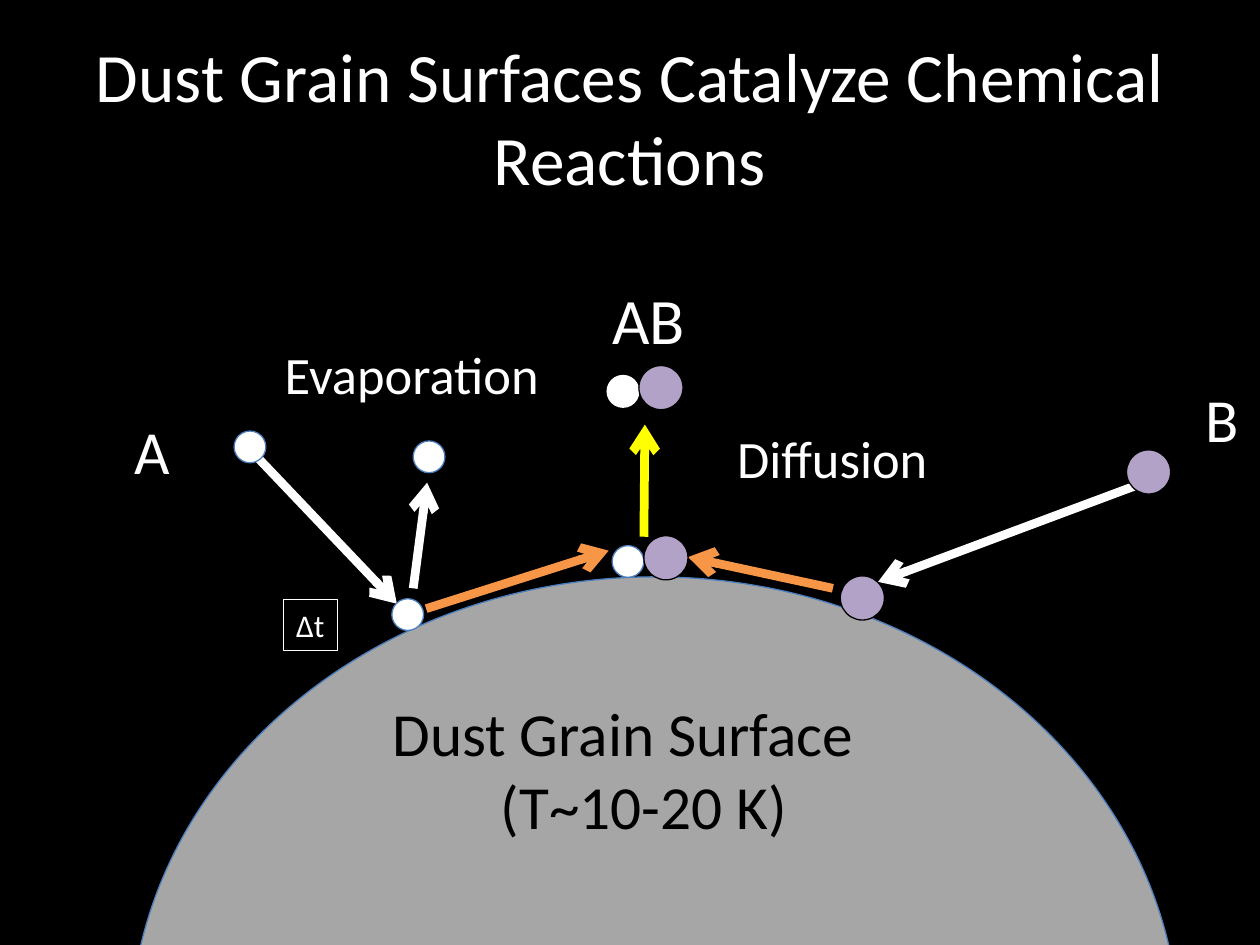
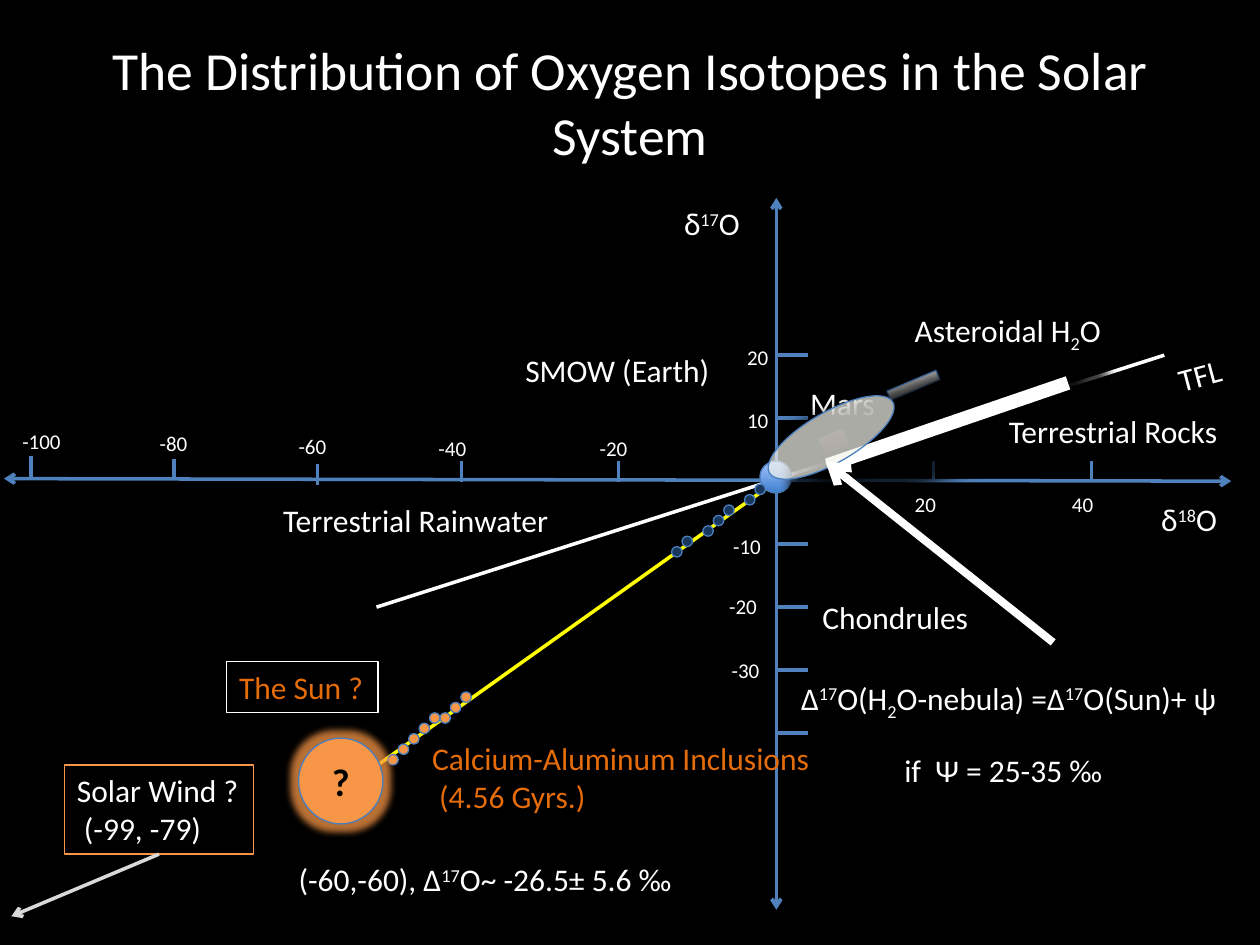
from collections import namedtuple

from lxml.etree import SubElement
from pptx import Presentation
from pptx.dml.color import RGBColor
from pptx.enum.shapes import MSO_CONNECTOR, MSO_SHAPE
from pptx.enum.text import MSO_ANCHOR, PP_ALIGN
from pptx.oxml.ns import qn
from pptx.util import Cm, Pt

# Shared style
FONT = "Calibri"
BLACK = RGBColor(0x00, 0x00, 0x00)
WHITE = RGBColor(0xFF, 0xFF, 0xFF)
YELLOW = RGBColor(0xFF, 0xFF, 0x00)
ORANGE = RGBColor(0xF7, 0x96, 0x46)
DARK_ORANGE = RGBColor(0xE4, 0x6C, 0x0A)
LILAC = RGBColor(0xB3, 0xA2, 0xC7)
GRAIN_GREY = RGBColor(0xA6, 0xA6, 0xA6)
OUTLINE_BLUE = RGBColor(0x4B, 0x7E, 0xBC)
AXIS_BLUE = RGBColor(0x4F, 0x81, 0xBD)
NAVY = RGBColor(0x17, 0x37, 0x5E)
MARS_RED = RGBColor(0xC0, 0x50, 0x4D)
WATER_GREY = RGBColor(0xBF, 0xBF, 0xBF)
WIND_GREY = RGBColor(0xD9, 0xD9, 0xD9)
IVORY = RGBColor(0xF5, 0xF4, 0xED)
EARTH_DARK = RGBColor(0x3F, 0x80, 0xCE)
EARTH_LIGHT = RGBColor(0xA4, 0xC4, 0xFF)

BASELINES = {"^": "30000", "_": "-25000"}

# Lengths inside a box are centimetres from its left and top
Box = namedtuple("Box", "left top width height")


def inside(box, left, top, width, height):
    return Box(box.left + left, box.top + top, width, height)


def write(frame, lines, size, color, align=PP_ALIGN.LEFT, bold=None):
    """Write lines; "|" separates spans, "^" raises and "_" lowers a span."""
    for number, line in enumerate(lines):
        para = frame.add_paragraph() if number else frame.paragraphs[0]
        para.alignment = align
        para.font.name = FONT
        para.font.size = Pt(size)
        para.font.bold = bold
        para.font.color.rgb = color
        for piece in line.split("|"):
            span = para.add_run()
            span.text = piece.lstrip("^_")
            if piece[0] in BASELINES:
                span.font._element.set("baseline", BASELINES[piece[0]])


def add_label(shapes, box, text, size=18, color=WHITE, align=PP_ALIGN.LEFT,
              border=None, wrap=False):
    label = shapes.add_textbox(*map(Cm, box))
    label.text_frame.word_wrap = wrap
    write(label.text_frame, text.split("\n"), size, color, align)
    if border is not None:
        label.line.color.rgb = border
        label.line.width = Pt(0.75)
    return label


def add_solid(shapes, kind, box, fill, outline=OUTLINE_BLUE, rotation=0):
    solid = shapes.add_shape(kind, *map(Cm, box))
    solid.shadow.inherit = False
    solid.rotation = rotation
    solid.fill.solid()
    solid.fill.fore_color.rgb = fill
    if outline is None:
        solid.line.fill.background()
    else:
        solid.line.color.rgb = outline
        solid.line.width = Pt(0.75)
    return solid


def add_disc(shapes, box, left, top, diameter, fill, outline=OUTLINE_BLUE):
    place = inside(box, left, top, diameter, diameter)
    return add_solid(shapes, MSO_SHAPE.OVAL, place, fill, outline)


def set_alpha(color_owner, percent):
    color = next(color_owner.iter(qn("a:srgbClr")))
    SubElement(color, qn("a:alpha"), val=str(percent * 1000))


def add_glow(solid, color, radius):
    effects = solid._element.spPr.find(qn("a:effectLst"))
    glow = SubElement(effects, qn("a:glow"), rad=str(Pt(radius)))
    SubElement(glow, qn("a:srgbClr"), val=str(color))
    set_alpha(glow, 75)


def add_line(shapes, box, start, end, color, width=2.0, ends=()):
    points = [Cm(value) for x, y in (start, end)
              for value in (box.left + x, box.top + y)]
    line = shapes.add_connector(MSO_CONNECTOR.STRAIGHT, *points)
    line.line.color.rgb = color
    line.line.width = Pt(width)
    for end_name in ends:
        SubElement(line.line._get_or_add_ln(), qn(f"a:{end_name}"), type="arrow")
    SubElement(line._element.spPr, qn("a:effectLst"))
    return line


def add_page(deck, title, title_box, size):
    page = deck.slides.add_slide(deck.slide_layouts[6])
    page.background.fill.solid()
    page.background.fill.fore_color.rgb = BLACK
    heading = add_label(page.shapes, title_box, title, size,
                        align=PP_ALIGN.CENTER, wrap=True)
    heading.text_frame.vertical_anchor = MSO_ANCHOR.MIDDLE
    return page


def draw_grain_chemistry(page, box):
    shapes = page.shapes

    # Grain and its caption
    add_solid(shapes, MSO_SHAPE.OVAL, inside(box, 2.62, 6.63, 21.16, 18.62), GRAIN_GREY)
    caption = add_label(shapes, inside(box, 7.62, 8.89, 9.88, 3.25),
                        "Dust Grain Surface\n(T~10-20 K)", 35, BLACK, PP_ALIGN.CENTER)
    temperature = caption.text_frame.paragraphs[1]
    temperature._p.get_or_add_pPr().set("marL", str(Cm(0.84)))

    # Paths of the atoms
    for start, end, color in (
        ((8.33, 6.86), (8.61, 4.73), WHITE),
        ((5.0, 4.02), (8.0, 7.17), WHITE),
        ((8.59, 7.27), (12.27, 6.1), ORANGE),
        ((16.79, 6.86), (13.87, 6.23), ORANGE),
        ((23.14, 4.7), (17.7, 6.73), WHITE),
        ((12.98, 5.82), (13.0, 3.56), YELLOW),
    ):
        add_line(shapes, box, start, end, color, 5, ["tailEnd"])

    # Atoms A and B, and the molecule AB
    for left, top in ((7.9, 7.07), (12.34, 6.0), (8.33, 3.89), (4.72, 3.69)):
        add_disc(shapes, box, left, top, 0.64, WHITE)
    for left, top in ((12.98, 5.8), (22.71, 4.07), (16.94, 6.61)):
        add_disc(shapes, box, left, top, 0.89, LILAC, BLACK)
    molecule = shapes.add_group_shape().shapes
    add_disc(molecule, box, 12.24, 2.57, 0.64, WHITE, WHITE)
    add_disc(molecule, box, 12.88, 2.37, 0.89, LILAC, BLACK)

    # Labels
    for text, size, place in (
        ("A", 35, (2.46, 3.2, 1.24, 1.75)),
        ("B", 35, (24.05, 2.57, 1.19, 1.75)),
        ("AB", 37, (12.09, 0.51, 1.98, 1.83)),
        ("Evaporation", 30, (5.49, 1.78, 5.69, 1.55)),
        ("Diffusion", 30, (14.61, 3.46, 4.39, 1.55)),
    ):
        add_label(shapes, inside(box, *place), text, size)
    add_label(shapes, inside(box, 5.72, 7.09, 1.09, 1.02), "Δt", border=WHITE)


def draw_axes(page, box):
    shapes = page.shapes
    both_ends = ["headEnd", "tailEnd"]
    add_line(shapes, box, (0.08, 5.85), (24.82, 5.9), AXIS_BLUE, ends=both_ends)
    add_line(shapes, box, (15.65, 0.19), (15.65, 14.54), AXIS_BLUE, ends=both_ends)

    # Ticks: across at x, down every 1.27 cm except at the crossing
    for x, top in ((0.62, 5.39), (3.51, 5.45), (6.4, 5.55), (9.3, 5.5),
                   (12.47, 5.5), (18.82, 5.5), (22.0, 5.5)):
        add_line(shapes, box, (x, top), (x, top + 0.42), AXIS_BLUE)
    for step in (0, 1, 3, 4, 5, 6):
        y = 3.36 + 1.27 * step
        add_line(shapes, box, (15.65, y), (16.28, y), AXIS_BLUE)

    # Tick labels, as wide as their digits need
    widths = {2: 0.94, 3: 1.07, 4: 1.3}
    for text, left, top in (
        ("-100", 0.2, 4.71), ("-80", 2.97, 4.76), ("-60", 5.77, 4.81),
        ("-40", 8.59, 4.86), ("-20", 11.84, 4.86),
        ("20", 18.19, 5.98), ("40", 21.36, 5.98),
        ("20", 14.81, 3.03), ("10", 14.81, 4.3),
        ("-10", 14.53, 6.84), ("-20", 14.45, 8.04), ("-30", 14.5, 9.33),
    ):
        add_label(shapes, inside(box, left, top, widths[len(text)], 0.76), text, 12)


def draw_samples(page, box):
    shapes = page.shapes

    # Fractionation line and mixing line
    add_line(shapes, box, (7.59, 8.44), (23.47, 3.36), WHITE)
    add_line(shapes, box, (7.59, 11.64), (15.65, 5.9), YELLOW)

    # Mars, asteroidal water and Earth
    add_solid(shapes, MSO_SHAPE.RECTANGLE, inside(box, 16.56, 4.94, 0.51, 0.33),
              MARS_RED, rotation=337.1)
    add_label(shapes, inside(box, 16.08, 3.82, 1.93, 1.02), "Mars")
    add_solid(shapes, MSO_SHAPE.RECTANGLE, inside(box, 17.88, 3.87, 1.07, 0.2),
              WATER_GREY, rotation=337.1)
    earth = add_disc(shapes, box, 15.32, 5.5, 0.64, EARTH_DARK)
    earth.fill.gradient()
    earth.fill.gradient_angle = 90
    for stop, color in zip(earth.fill.gradient_stops, (EARTH_DARK, EARTH_LIGHT)):
        stop.color.rgb = color

    # Measured grains climb the mixing line on a square grid
    step = 0.21
    chondrules = ((0, 0), (1, 1), (3, 2), (4, 3), (5, 4), (7, 5), (8, 6))
    inclusions = ((0, 0), (1, 1), (2, 2), (3, 3), (4, 4), (5, 4), (6, 5), (7, 6))
    for left, top, color, grains in ((13.54, 7.22, NAVY, chondrules),
                                     (7.82, 11.41, ORANGE, inclusions)):
        cluster = shapes.add_group_shape().shapes
        for column, row in grains:
            add_disc(cluster, box, left + column * step, top - row * step, step, color)

    # Terrestrial rocks and the chondrule field
    rocks = add_solid(shapes, MSO_SHAPE.RECTANGLE, inside(box, 16.54, 4.61, 5.13, 0.28),
                      WHITE, None, 341.1)
    add_glow(rocks, BLACK, 14)
    field = add_solid(shapes, MSO_SHAPE.OVAL, inside(box, 15.32, 4.51, 2.87, 1.02),
                      IVORY, rotation=330.1)
    set_alpha(field._element.spPr, 70)
    add_line(shapes, box, (21.23, 9.15), (16.64, 5.5), WHITE, 4.5, ["tailEnd"])


def draw_sun(page, box):
    shapes = page.shapes
    sun = add_solid(shapes, MSO_SHAPE.OVAL, inside(box, 6.02, 11.08, 1.7, 1.73), ORANGE)
    add_glow(sun, ORANGE, 8)
    sun.text_frame.vertical_anchor = MSO_ANCHOR.MIDDLE
    write(sun.text_frame, ["?"], 22, BLACK, PP_ALIGN.CENTER, True)
    add_label(shapes, inside(box, 4.57, 9.54, 3.05, 1.02), "The Sun ?",
              color=DARK_ORANGE, border=WHITE)

    # Solar wind lies off the plot
    wind = add_label(shapes, inside(box, 1.3, 11.62, 3.81, 1.8),
                     "Solar Wind ?\n (-99, -79)", border=ORANGE)
    pointer = add_line(shapes, box, (3.2, 13.42), (0.23, 14.67), WIND_GREY,
                       ends=["tailEnd"])
    pointer.begin_connect(wind, 2)


def draw_plot_labels(page, box):
    shapes = page.shapes
    for text, left, top, width in (
        ("δ|^18|O", 23.16, 6.16, 1.7),
        ("δ|^17|O", 13.54, 0.19, 1.7),
        ("Terrestrial Rainwater", 5.46, 6.18, 5.92),
        ("Asteroidal H|_2|O", 18.19, 2.35, 4.32),
        ("Chondrules", 16.33, 8.14, 3.48),
        ("Terrestrial Rocks", 20.09, 4.38, 4.75),
        ("SMOW (Earth)", 10.34, 3.16, 4.27),
        ("(-60,-60), Δ|^17|O~ -26.5± 5.6 ‰", 5.77, 13.42, 8.18),
        ("Δ|^17|O(H|_2|O-nebula) =Δ|^17|O(Sun)+ ψ", 15.9, 9.76, 9.09),
        ("if  Ψ = 25-35 ‰", 17.98, 11.21, 4.55),
    ):
        add_label(shapes, inside(box, left, top, width, 1.02), text)
    add_label(shapes, inside(box, 8.46, 10.98, 8.2, 1.8),
              "Calcium-Aluminum Inclusions\n (4.56 Gyrs.)", color=DARK_ORANGE)
    add_label(shapes, inside(box, 23.5, 3.24, 1.4, 1.02), "TFL").rotation = 345.1


def main():
    deck = Presentation()
    deck.slide_width, deck.slide_height = Cm(25.4), Cm(19.05)

    page = add_page(deck, "Dust Grain Surfaces Catalyze Chemical Reactions",
                    Box(1.27, 0.76, 22.86, 3.18), 39.6)
    draw_grain_chemistry(page, Box(0, 5, 25.4, 14.05))

    page = add_page(deck, "The Distribution of Oxygen Isotopes in the Solar System",
                    Box(1.27, 0.64, 22.86, 2.82), 30.6)
    plot = Box(0, 3.8, 25.4, 15.25)
    for draw in (draw_axes, draw_samples, draw_sun, draw_plot_labels):
        draw(page, plot)

    deck.save("out.pptx")


if __name__ == "__main__":
    main()
